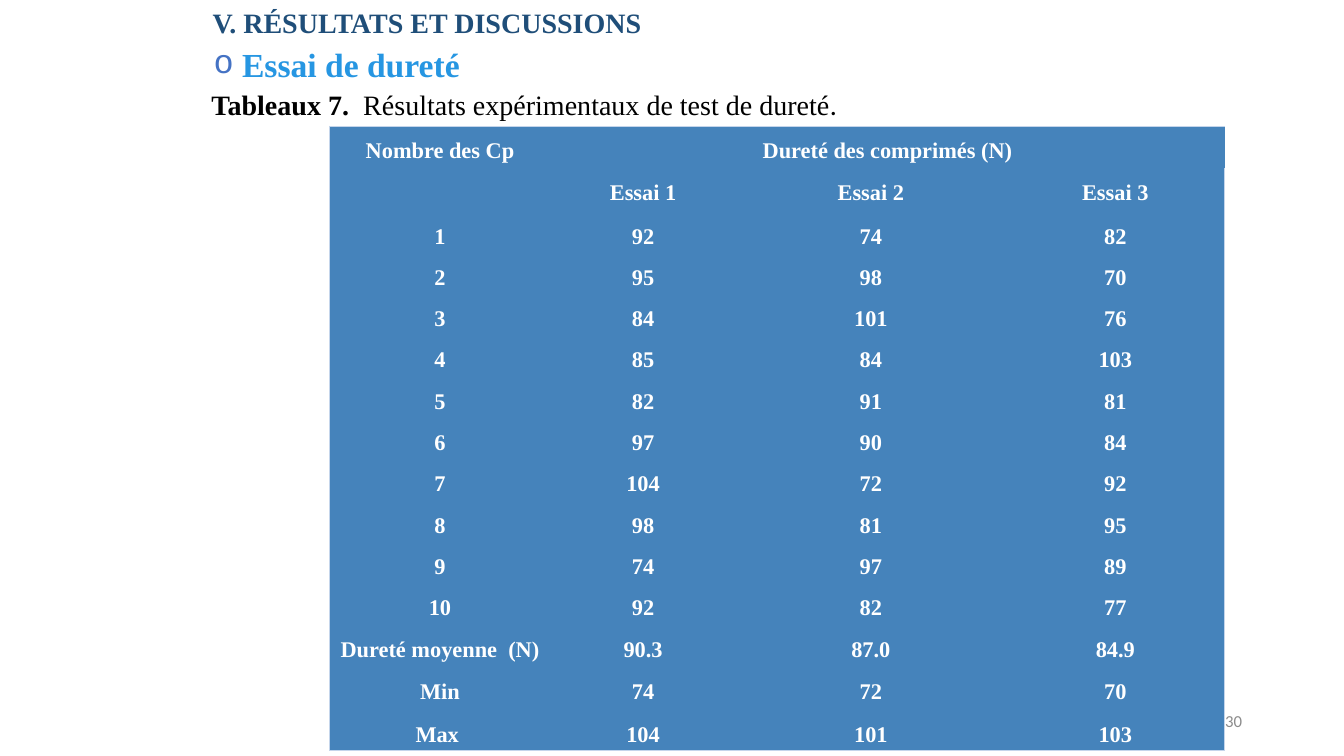
from lxml.etree import SubElement
from pptx import Presentation
from pptx.dml.color import RGBColor
from pptx.enum.text import MSO_ANCHOR, PP_ALIGN
from pptx.oxml.ns import qn
from pptx.util import Inches, Pt

# Grid: ten columns and ten rows to the inch
COLS, ROWS = 133.33, 75
SERIF, SANS = "Times New Roman", "Calibri"
HUES = {
    "title": "1F4E79", "bullet": "4472C4", "head": "2696E2", "text": "000000",
    "page": "8C8C8C", "cell": "4583BB", "edge": "C4D5EB", "white": "FFFFFF",
}
NO_GRID = "{2D5ABB26-0587-4C30-8999-92F81FD0307C}"

# Table values
TRIALS = [
    [92, 95, 84, 85, 82, 97, 104, 98, 74, 92],
    [74, 98, 101, 84, 91, 90, 72, 81, 97, 82],
    [82, 70, 76, 103, 81, 84, 92, 95, 89, 77],
]
WIDTHS = [21.9, 18.4, 26.8, 21.7]
HEIGHTS = [4.2, 4.3] + [4.1] * 10 + [4.2, 4.3, 4]


def grid(n):
    return Inches(n / 10)


def put(shape, box):
    shape.left, shape.top, shape.width, shape.height = map(grid, box)


def add_run(para, text, size, hue, bold=False, face=SERIF):
    run = para.add_run()
    run.text = text
    font = run.font
    font.size, font.bold, font.name = Pt(size), bold, face
    font.color.rgb = RGBColor.from_string(HUES[hue])


def add_box(slide, box):
    frame = slide.shapes.add_textbox(*map(grid, box)).text_frame
    frame.word_wrap = True
    return frame


def add_title(slide, box):
    title = slide.shapes.title
    put(title, box)
    frame = title.text_frame
    frame.word_wrap = False
    frame.vertical_anchor = MSO_ANCHOR.TOP
    para = frame.paragraphs[0]
    para.alignment = PP_ALIGN.LEFT
    add_run(para, "V. RÉSULTATS ET DISCUSSIONS", 20, "title", True)


def add_page(slide, box):
    frame = add_box(slide, box)
    frame.vertical_anchor = MSO_ANCHOR.MIDDLE
    para = frame.paragraphs[0]
    para.alignment = PP_ALIGN.RIGHT
    add_run(para, "30", 12, "page", face=SANS)


def add_legend(slide, box):
    para = add_box(slide, box).paragraphs[0]
    para.alignment = PP_ALIGN.JUSTIFY
    add_run(para, "Tableaux 7.  ", 20, "text", True)
    add_run(para, "Résultats expérimentaux de test de dureté", 20, "text")
    add_run(para, ". ", 20, "text", face=SANS)


def add_head(slide, box):
    para = add_box(slide, box).paragraphs[0]
    props = para._p.get_or_add_pPr()
    SubElement(props, qn("a:buFont"), typeface="Courier New")
    SubElement(props, qn("a:buChar"), char="o")
    add_run(para, " ", 24, "bullet", True)
    add_run(para, "Essai de dureté", 24, "head", True)


def add_edge(cell, side):
    line = SubElement(cell._tc.get_or_add_tcPr(), qn("a:ln" + side), w=str(Pt(0.5)))
    fill = SubElement(line, qn("a:solidFill"))
    SubElement(fill, qn("a:srgbClr"), val=HUES["edge"])


def fill_cell(cell, text, sides):
    for side in sides:
        add_edge(cell, side)
    cell.fill.solid()
    cell.fill.fore_color.rgb = RGBColor.from_string(HUES["cell"])
    cell.margin_left = cell.margin_right = Inches(0.07)
    cell.margin_top = cell.margin_bottom = 0
    para = cell.text_frame.paragraphs[0]
    para.alignment = PP_ALIGN.CENTER
    para.line_spacing = 1.5
    if text:
        add_run(para, text, 16, "white", True)


def get_rows():
    rows = [["Nombre des Cp", "Dureté des comprimés (N)", "", ""],
            ["", "Essai 1", "Essai 2", "Essai 3"]]
    for num, vals in enumerate(zip(*TRIALS), 1):
        rows.append([str(num), *map(str, vals)])
    rows.append(["Dureté moyenne  (N)"] + [f"{sum(t) / len(t):.1f}" for t in TRIALS])
    rows.append(["Min"] + [str(min(t)) for t in TRIALS])
    rows.append(["Max "] + [str(max(t)) for t in TRIALS])
    return rows


def add_grid(slide, left, top):
    rows = get_rows()
    box = left, top, sum(WIDTHS), sum(HEIGHTS)
    frame = slide.shapes.add_table(len(rows), len(WIDTHS), *map(grid, box))
    table = frame.table
    table.first_row = table.horz_banding = False
    for style in frame._element.iter(qn("a:tableStyleId")):
        style.text = NO_GRID
    for col, width in zip(table.columns, WIDTHS):
        col.width = grid(width)
    for row, height in zip(table.rows, HEIGHTS):
        row.height = grid(height)

    # Only the outer edges carry a line
    for r, texts in enumerate(rows):
        for c, text in enumerate(texts):
            ends = {"L": c == 0, "R": c == len(WIDTHS) - 1,
                    "T": r == 0, "B": r == len(rows) - 1}
            fill_cell(table.cell(r, c), text, [s for s in ends if ends[s]])
    table.cell(0, 0).merge(table.cell(1, 0))
    table.cell(0, 1).merge(table.cell(0, 3))


def main():
    deck = Presentation()
    deck.slide_width, deck.slide_height = grid(COLS), grid(ROWS)
    slide = deck.slides.add_slide(deck.slide_layouts[5])
    add_title(slide, (20.1, 0, 45, 4.4))
    add_page(slide, (94.2, 69.5, 30, 4))
    add_legend(slide, (20, 8.2, 84, 4.4))
    add_grid(slide, 32.7, 12.5)
    add_head(slide, (20.2, 3.9, 46.4, 5))
    deck.save("out.pptx")


if __name__ == "__main__":
    main()
